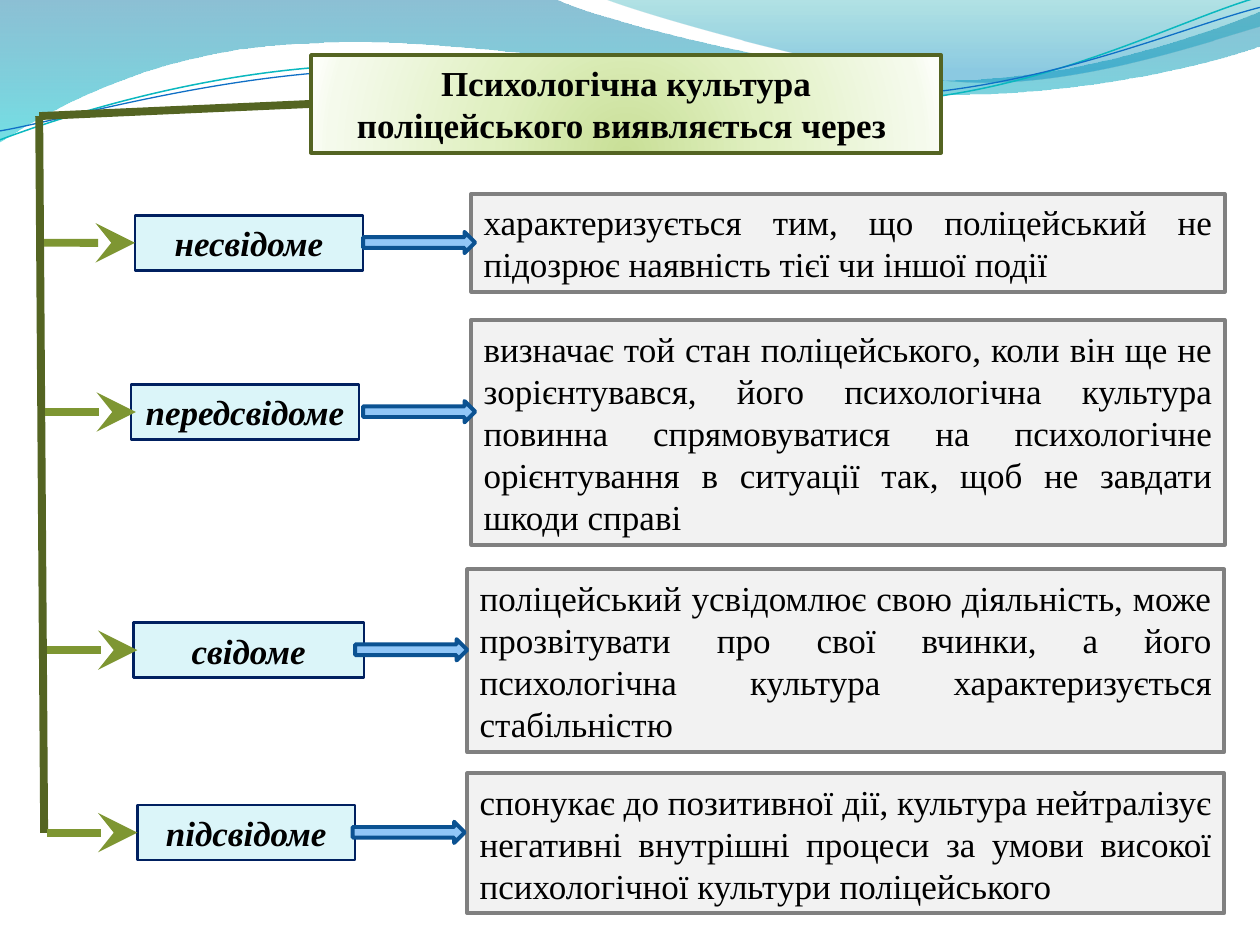
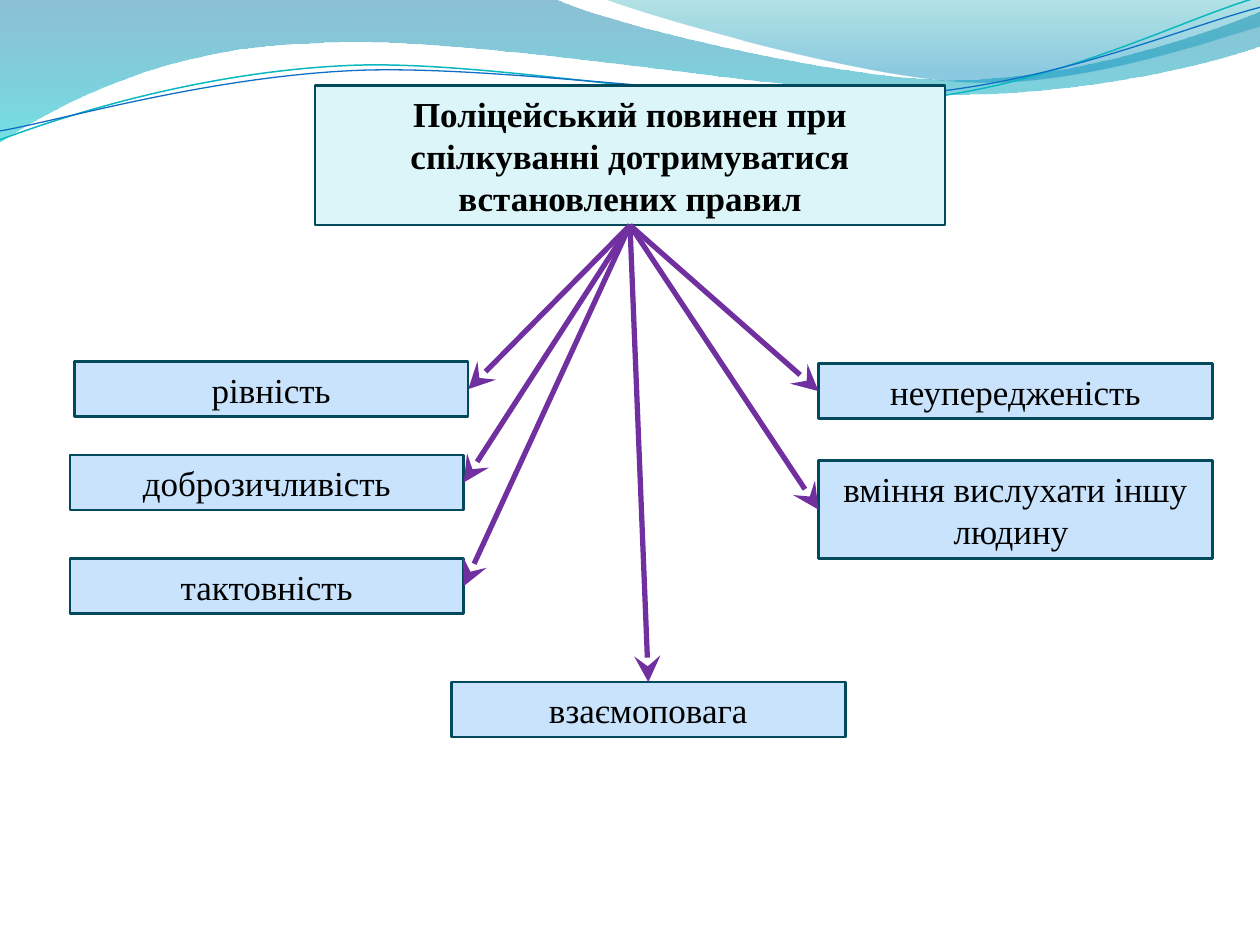
from lxml import etree
from pptx import Presentation
from pptx.dml.color import RGBColor
from pptx.enum.shapes import MSO_CONNECTOR, MSO_SHAPE
from pptx.enum.text import MSO_ANCHOR, MSO_AUTO_SIZE, PP_ALIGN
from pptx.oxml.ns import qn
from pptx.util import Cm, Pt

RECT, ARROW = MSO_SHAPE.RECTANGLE, MSO_SHAPE.RIGHT_ARROW
STRAIGHT = MSO_CONNECTOR.STRAIGHT
MIDDLE, FIXED = MSO_ANCHOR.MIDDLE, MSO_AUTO_SIZE.NONE
CENTER, JUSTIFY = PP_ALIGN.CENTER, PP_ALIGN.JUSTIFY
TOP, LEFT, BOTTOM, RIGHT = range(4)


class Theme:
    font, size = "Times New Roman", Pt(20)
    ink = "000000"
    ice, navy = "DBF5F9", "002060"
    sky, teal = "C8E3FB", "03495C"
    mist, gray = "F2F2F2", "808080"
    blue, deep = "91C6F7", "0B5292"
    olive, leaf = "546422", "7E9632"
    violet = "7030A0"
    aqua, cobalt = "0AB8BF", "0F6FC6"
    # gradient stops: position %, colour, opacity %
    sea = [(0, "0074A1", 45), (100, "00C6CF", 55)]
    lagoon = [(0, "00A1A9", 30), (80, "008BBF", 45)]
    lime = [(0, "C9DF97", 100), (43, "E0F0C1", 100),
            (93, "F5FAEC", 100), (100, "FCFEF8", 100)]


def dress(shape, fill, edge, width, text="", align=CENTER, bold=False, italic=False):
    """Set the fill, outline and text of a shape."""
    shape.shadow.inherit = False
    shape.fill.solid()
    shape.fill.fore_color.rgb = RGBColor.from_string(fill)
    shape.line.color.rgb = RGBColor.from_string(edge)
    shape.line.width = Pt(width)
    if text:
        frame = shape.text_frame
        frame.text = text
        frame.word_wrap = True
        frame.auto_size = FIXED
        frame.vertical_anchor = MIDDLE
        para = frame.paragraphs[0]
        para.alignment = align
        para.font.name, para.font.size = Theme.font, Theme.size
        para.font.bold, para.font.italic = bold, italic
        para.font.color.rgb = RGBColor.from_string(Theme.ink)
    return shape


def link(slide, color, width, start=(0, 0), end=(0, 0), head=True):
    """Draw a straight line between two points given in cm."""
    line = slide.shapes.add_connector(STRAIGHT, *map(Cm, start + end))
    line.line.color.rgb = RGBColor.from_string(color)
    line.line.width = Pt(width)
    props = line.element.spPr
    if head:
        etree.SubElement(props.find(qn("a:ln")), qn("a:tailEnd"),
                         type="stealth", w="lg", len="lg")
    etree.SubElement(props, qn("a:effectLst"))
    return line


deck = Presentation()
deck.slide_width, deck.slide_height = Cm(25.4), Cm(19.05)
layout = deck.slide_layouts[5]
levels, rules = deck.slides.add_slide(layout), deck.slides.add_slide(layout)

# Waves shared by both slides: a pair is a straight step, six numbers a curve
waves = [
    (Theme.sea, None, (0, 0), [
        (11.18, -0.03),
        (12.09, 0.43, 16.87, 1.6, 19.25, 1.6),
        (21.67, 1.6, 24.33, 0.66, 25.4, 0.23),
        (25.43, 0.91),
        (24.97, 1.12, 22.1, 1.93, 18.95, 1.91),
        (15.8, 1.91, 9.7, 0.71, 6.53, 0.86),
        (3.28, 0.91, 1.17, 2.11, -0.03, 2.87)]),
    (Theme.lagoon, None, (12.17, -0.03), [
        (12.93, 0.28, 17.32, 1.57, 19.53, 1.65),
        (21.74, 1.75, 24.41, 0.81, 25.4, 0.53),
        (25.4, 0)]),
    (Theme.aqua, 0.85, (0, 2.82), [
        (1.22, 2.36, 4.01, 1.45, 7.04, 1.32),
        (10.03, 1.19, 15.06, 2.26, 18.11, 2.03),
        (21.16, 1.8, 23.83, 0.38, 25.35, -0.05)]),
    (Theme.cobalt, 0.75, (0, 2.64), [
        (1.19, 2.44, 4.17, 1.55, 7.19, 1.42),
        (10.24, 1.3, 15.16, 2.13, 18.21, 1.91),
        (21.23, 1.7, 23.9, 0.53, 25.4, 0.15)]),
]
paints = []
for index, (paint, width, start, steps) in enumerate(waves):
    points = [(Cm(step[at]), Cm(step[at + 1]))
              for step in steps for at in range(0, len(step), 2)]
    pen = levels.shapes.build_freeform(*map(Cm, start))
    pen.add_line_segments(points, close=width is None)
    wave = pen.convert_to_shape()
    # Join the three points of each curve into one Bezier segment
    corners = wave.element.spPr.findall(".//" + qn("a:lnTo"))
    for step in steps:
        trio, corners = corners[:len(step) // 2], corners[len(step) // 2:]
        if len(trio) == 3:
            curve = etree.Element(qn("a:cubicBezTo"))
            trio[0].addprevious(curve)
            for corner in trio:
                curve.append(corner[0])
                corner.getparent().remove(corner)
    wave.shadow.inherit = False
    if width:
        wave.fill.background()
        wave.line.color.rgb = RGBColor.from_string(paint)
        wave.line.width = Pt(width)
    else:
        wave.line.fill.background()
        paints.append((wave, paint))
    wave.element.nvSpPr.cNvPr.set("id", str(20 + index))
    layout.shapes.element.append(wave.element)

# Titles
heads = []
for slide, text, area, fill, edge, width in [
    (levels, "Психологічна культура поліцейського виявляється через ",
     (6.27, 1.11, 12.7, 1.97), Theme.ice, Theme.olive, 2.25),
    (rules, "Поліцейський повинен при спілкуванні дотримуватися встановлених правил",
     (6.35, 1.72, 12.7, 2.82), Theme.ice, Theme.teal, 1.5),
]:
    title = slide.shapes.title
    title.left, title.top, title.width, title.height = map(Cm, area)
    heads.append(dress(title, fill, edge, width, text, bold=True))
paints.append((heads[0], Theme.lime))

# Gradients: linear for the waves, radial for the first title
for shape, stops in paints:
    shape.fill.gradient()
    grad = shape.element.spPr.find(qn("a:gradFill"))
    grad.clear()
    group = etree.SubElement(grad, qn("a:gsLst"))
    for place, color, alpha in stops:
        stop = etree.SubElement(group, qn("a:gs"), pos=str(place * 1000))
        tint = etree.SubElement(stop, qn("a:srgbClr"), val=color)
        etree.SubElement(tint, qn("a:alpha"), val=str(alpha * 1000))
    if shape is heads[0]:
        radial = etree.SubElement(grad, qn("a:path"), {"path": "circle"})
        etree.SubElement(radial, qn("a:fillToRect"), l="50000", t="130000", r="50000", b="-30000")
    else:
        etree.SubElement(grad, qn("a:lin"), ang="5400000", scaled="1")

# Slide 1: levels of awareness
# name, its left, top and width; branch and arrow lefts; note and its area
rows = [
    ("несвідоме", 2.72, 4.34, 4.6, 0.89, 7.32,
     "характеризується тим, що поліцейський не підозрює наявність тієї чи іншої події",
     (9.5, 3.91, 15.19, 1.97)),
    ("передсвідоме", 2.64, 7.75, 4.6, 0.91, 7.32,
     "визначає той стан поліцейського, коли він ще не зорієнтувався, його психологічна "
     "культура повинна спрямовуватися на психологічне орієнтування в ситуації так, "
     "щоб не завдати шкоди справі ",
     (9.5, 6.45, 15.19, 4.53)),
    ("свідоме", 2.69, 12.55, 4.65, 0.94, 7.16,
     "поліцейський усвідомлює свою діяльність, може прозвітувати про свої вчинки, "
     "а його психологічна культура характеризується стабільністю",
     (9.42, 11.48, 15.26, 3.68)),
    ("підсвідоме", 2.77, 16.23, 4.39, 0.94, 7.11,
     "спонукає до позитивної дії, культура нейтралізує негативні внутрішні процеси "
     "за умови високої психологічної культури поліцейського",
     (9.42, 15.59, 15.26, 2.82)),
]
tall, reach = 1.11, 1.83
link(levels, Theme.olive, 4.5, end=(0.79, 2.34), head=False).begin_connect(heads[0], LEFT)
link(levels, Theme.olive, 4.5, (0.79, 2.34), (0.89, 16.79), head=False)
for name, left, top, width, stem, tip, note, area in rows:
    middle = top + tall / 2
    label = levels.shapes.add_shape(RECT, *map(Cm, (left, top, width, tall)))
    dress(label, Theme.ice, Theme.navy, 1.5, name, bold=True, italic=True)
    panel = levels.shapes.add_shape(RECT, *map(Cm, area))
    dress(panel, Theme.mist, Theme.gray, 2.25, note, JUSTIFY)
    arrow = levels.shapes.add_shape(ARROW, *map(Cm, (tip, middle - 0.22, 2.26, 0.43)))
    dress(arrow, Theme.blue, Theme.deep, 2.25)
    branch = link(levels, Theme.leaf, 4.5, (stem, middle), (stem + reach, middle))
    if stem + reach - left < 0.05:
        branch.end_connect(label, LEFT)

# Slide 2: rules of communication
for name, left, top, height, side in [
    ("рівність", 1.5, 7.29, tall, RIGHT),
    ("неупередженість", 16.5, 7.33, tall, LEFT),
    ("доброзичливість", 1.41, 9.17, tall, RIGHT),
    ("вміння вислухати іншу людину ", 16.5, 9.29, 1.97, LEFT),
    ("тактовність", 1.41, 11.26, tall, RIGHT),
    ("взаємоповага", 9.1, 13.75, tall, TOP),
]:
    rule = rules.shapes.add_shape(RECT, *map(Cm, (left, top, 7.94, height)))
    dress(rule, Theme.sky, Theme.teal, 1.5, name)
    ray = link(rules, Theme.violet, 3)
    ray.begin_connect(heads[1], BOTTOM)
    ray.end_connect(rule, side)

deck.save("out.pptx")
